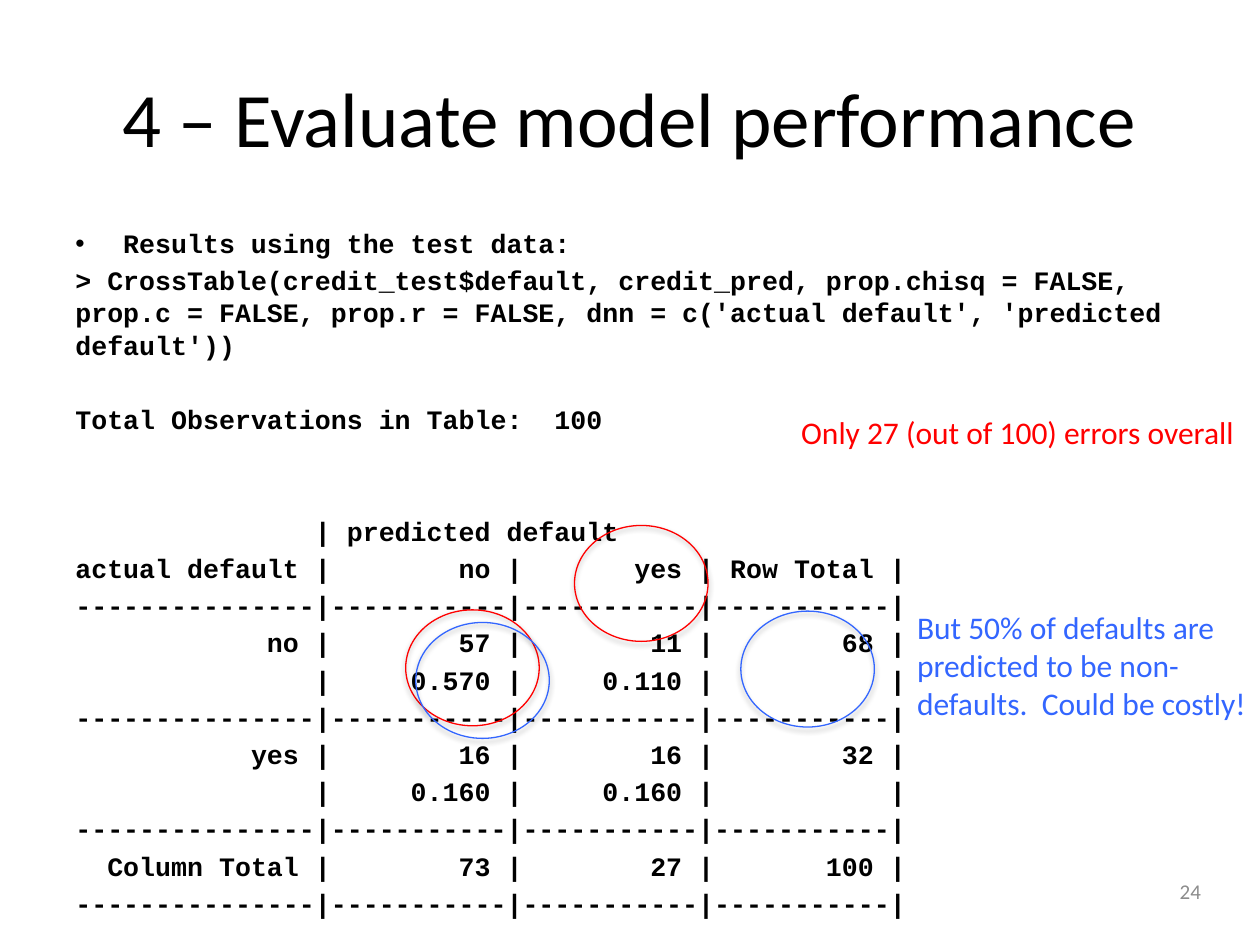
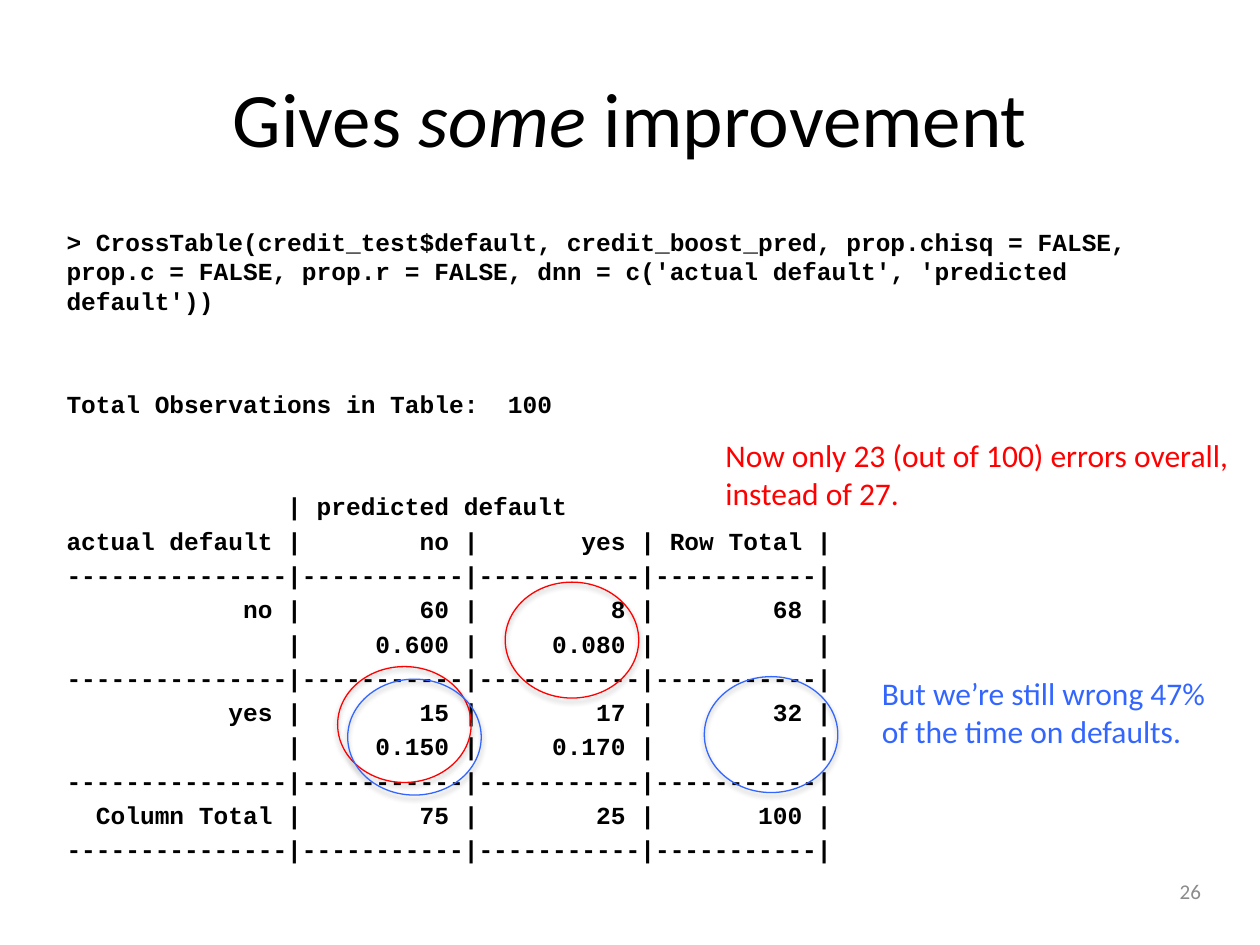
from lxml import etree
from pptx import Presentation
from pptx.dml.color import RGBColor
from pptx.enum.shapes import MSO_SHAPE
from pptx.enum.text import MSO_ANCHOR, PP_ALIGN
from pptx.oxml.ns import qn
from pptx.util import Inches, Pt

OVAL = MSO_SHAPE.OVAL
TOP, MIDDLE = MSO_ANCHOR.TOP, MSO_ANCHOR.MIDDLE
LEFT, CENTER, RIGHT = PP_ALIGN.LEFT, PP_ALIGN.CENTER, PP_ALIGN.RIGHT

BLACK = RGBColor(0x00, 0x00, 0x00)
GRAY = RGBColor(0x8C, 0x8C, 0x8C)
RED = RGBColor(0xFF, 0x00, 0x00)
BLUE = RGBColor(0x33, 0x66, 0xFF)

TITLE = {"name": "Calibri", "size": Pt(44)}
NOTE = {"name": "Calibri", "size": Pt(18)}
NUMBER = {"name": "Calibri", "size": Pt(12)}
CODE = {"name": "Courier New", "bold": True}

RING_SIZE = (1.06, 0.92)
LABEL_WIDTH, CELL_WIDTH = 14, 9


def add_run(p, text, font, color=BLACK):
    r = p.add_run()
    r.text = text
    r.font.color.rgb = color
    for key, value in font.items():
        setattr(r.font, key, value)


def add_box(slide, box, anchor=TOP):
    tf = slide.shapes.add_textbox(*map(Inches, box)).text_frame
    tf.word_wrap = True
    tf.vertical_anchor = anchor
    return tf


def add_text(slide, box, runs, font, color=BLACK, align=LEFT, anchor=TOP):
    """Add one paragraph from (text, italic) runs."""
    p = add_box(slide, box, anchor).paragraphs[0]
    p.alignment = align
    for text, italic in runs:
        add_run(p, text, {**font, "italic": italic}, color)


def add_note(slide, box, text, color):
    add_text(slide, box, [(text, False)], NOTE, color)


def add_frame(prs, title_runs, number):
    """Add a slide with its title and slide number."""
    slide = prs.slides.add_slide(prs.slide_layouts[6])
    add_text(slide, (7.3, 6.87, 2.33, 0.4), [(number, False)], NUMBER, GRAY, RIGHT, MIDDLE)
    add_text(slide, (0.5, 0.3, 9, 1.25), title_runs, TITLE, BLACK, CENTER, MIDDLE)
    return slide


def table_line(label, cells):
    cells = "".join(f" {cell:>{CELL_WIDTH}} |" for cell in cells)
    return f"{label:>{LABEL_WIDTH}} |{cells}"


def cross_table(counts, shares, row_totals, column_totals):
    """Return the console lines of a two-by-two cross table."""
    rule = "-" * (LABEL_WIDTH + 1) + "|" + ("-" * (CELL_WIDTH + 2) + "|") * 3
    lines = [table_line("", []) + " predicted default",
             table_line("actual default", ["no", "yes", "Row Total"]), rule]
    for label, count, share, total in zip(["no", "yes"], counts, shares, row_totals):
        lines += [table_line(label, [*count, total]),
                  table_line("", [*share, ""]), rule]
    return lines + [table_line("Column Total", column_totals), rule]


def console_lines(prediction, table, gaps):
    """Return (text, blank lines above) for the call and its output."""
    call = (f"> CrossTable(credit_test$default, {prediction}, prop.chisq = FALSE, "
            "prop.c = FALSE, prop.r = FALSE, "
            "dnn = c('actual default', 'predicted default'))")
    total = "Total Observations in Table:  100"
    return ([(call, 0), (total, gaps[0]), (table[0], gaps[1])]
            + [(line, 0) for line in table[1:]])


def add_bullet(p):
    pPr = p._p.get_or_add_pPr()
    pPr.set("marL", str(Inches(0.38)))
    pPr.set("indent", str(-Inches(0.38)))
    etree.SubElement(pPr, qn("a:buFont"), typeface="Arial")
    etree.SubElement(pPr, qn("a:buChar"), char="•")


def add_console(slide, left, lines, size, line_height, gap, bullet=False):
    tf = add_box(slide, (left, 1.75, 9, 4.95))
    for i, (text, blanks) in enumerate(lines):
        p = tf.paragraphs[0] if i == 0 else tf.add_paragraph()
        p.line_spacing = Pt(line_height)
        p.space_before = Pt(gap + blanks * (line_height + gap))
        if bullet and i == 0:
            add_bullet(p)
        add_run(p, text, {**CODE, "size": Pt(size)})


def add_ring(slide, left, top, color):
    sp = slide.shapes.add_shape(OVAL, *map(Inches, (left, top, *RING_SIZE)))
    sp.fill.background()
    sp.line.color.rgb = color
    sp.line.width = Pt(0.75)
    sp.shadow.inherit = False
    effects = sp._element.spPr.find(qn("a:effectLst"))
    shadow = etree.SubElement(effects, qn("a:outerShdw"), blurRad=str(Pt(3.1)),
                              dist=str(Pt(1.8)), dir="5400000", rotWithShape="0")
    black = etree.SubElement(shadow, qn("a:srgbClr"), val="000000")
    etree.SubElement(black, qn("a:alpha"), val="35000")


def add_rings(slide, red, blue):
    for color, places in ((RED, red), (BLUE, blue)):
        for left, top in places:
            add_ring(slide, left, top, color)


def add_evaluation(prs):
    slide = add_frame(prs, [("4 – Evaluate model performance", False)], "24")
    table = cross_table([(57, 11), (16, 16)], [("0.570", "0.110"), ("0.160", "0.160")],
                        (68, 32), (73, 27, 100))
    lines = [("Results using the test data:", 0)]
    lines += console_lines("credit_pred", table, (1, 2))
    add_console(slide, 0.5, lines, 15.2, 18.4, 2.87, bullet=True)
    add_note(slide, (6.26, 3.23, 3.69, 0.4), "Only 27 (out of 100) errors overall", RED)
    add_note(slide, (7.18, 4.78, 2.86, 1.01),
             "But 50% of defaults are predicted to be non-defaults.  Could be costly!", BLUE)
    add_rings(slide, red=[(3.22, 4.84), (4.56, 4.17)], blue=[(5.88, 4.85), (3.3, 4.94)])


def add_improvement(prs):
    slide = add_frame(prs, [("Gives ", False), ("some", True), (" improvement", False)], "26")
    table = cross_table([(60, 8), (15, 17)], [("0.600", "0.080"), ("0.150", "0.170")],
                        (68, 32), (75, 25, 100))
    lines = console_lines("credit_boost_pred", table, (2, 2))
    add_console(slide, 0.43, lines, 14, 16.85, 2.75)
    add_note(slide, (5.66, 3.41, 4.34, 0.71),
             "Now only 23 (out of 100) errors overall, instead of 27.", RED)
    add_note(slide, (6.9, 5.3, 2.86, 0.71),
             "But we’re still wrong 47% of the time on defaults.", BLUE)
    add_rings(slide, red=[(2.68, 5.29), (4.01, 4.62)], blue=[(5.59, 5.37), (2.76, 5.39)])


def main():
    prs = Presentation()
    prs.slide_width, prs.slide_height = Inches(10), Inches(7.5)
    add_evaluation(prs)
    add_improvement(prs)
    prs.save("out.pptx")


if __name__ == "__main__":
    main()
